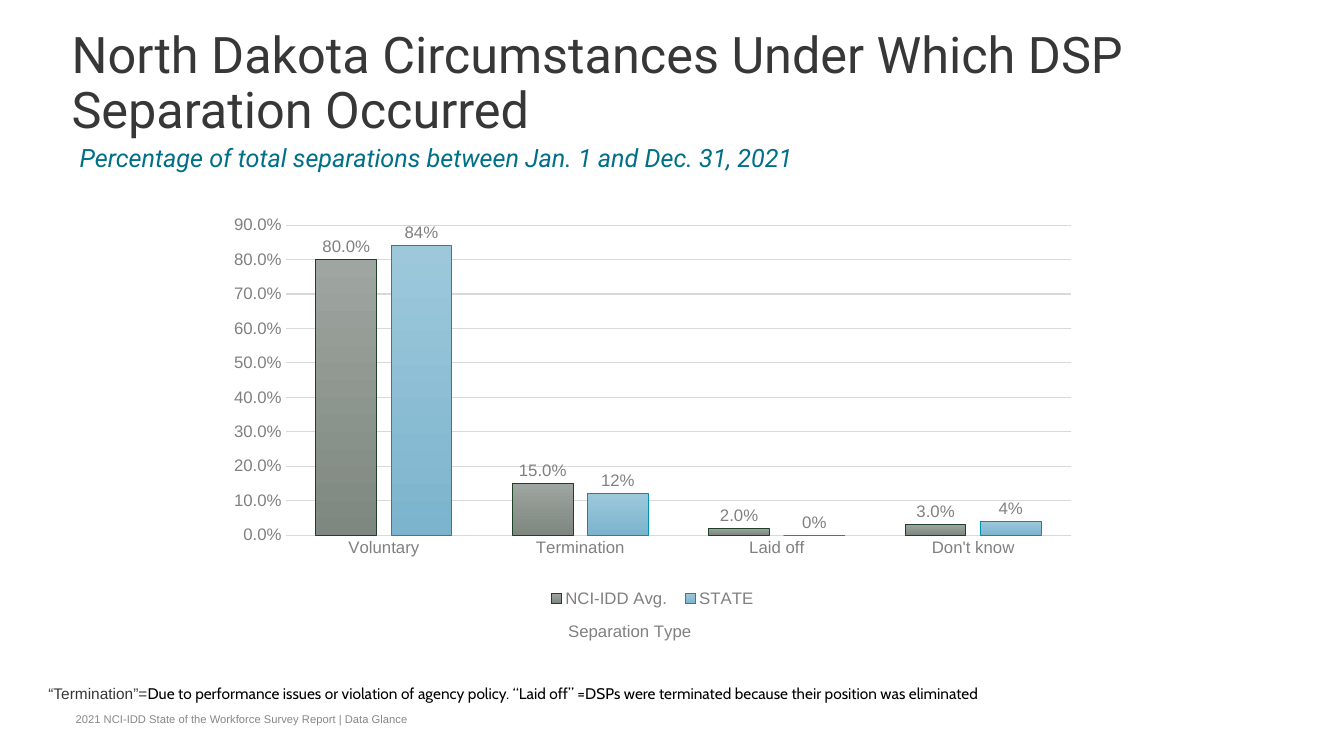
"""Build the slide on circumstances of DSP separation in North Dakota."""
from dataclasses import dataclass
from typing import Any

from pptx import Presentation
from pptx.chart.chart import Chart
from pptx.chart.data import CategoryChartData
from pptx.dml.color import RGBColor
from pptx.enum.chart import XL_CHART_TYPE, XL_LABEL_POSITION, XL_LEGEND_POSITION, XL_TICK_MARK
from pptx.enum.text import MSO_ANCHOR, MSO_AUTO_SIZE, PP_ALIGN
from pptx.oxml import parse_xml
from pptx.oxml.ns import nsdecls, qn
from pptx.util import Inches, Pt

GREY, RULE, INK = "808080", "D9D9D9", "373737"


@dataclass(frozen=True)
class Run:
    text: str
    font: str
    size: float
    color: str
    italic: bool = False


@dataclass(frozen=True)
class Passage:
    box: tuple[float, float, float, float]
    runs: tuple[Run, ...]
    line_spacing: float = 1.0
    anchor: MSO_ANCHOR = MSO_ANCHOR.TOP


@dataclass(frozen=True)
class Group:
    name: str
    shares: tuple[float, ...]
    gradient: tuple[str, str]
    outline: str
    label_format: str


HEADING = Passage(
    (0.71, 0.3, 11.83, 0.69),
    (Run("North Dakota Circumstances Under Which DSP Separation Occurred", "Roboto", 36, INK),),
    0.9,
)
PASSAGES = (
    Passage(
        (0.75, 7.05, 7.86, 0.15),
        (Run("2021 NCI-IDD State of the Workforce Survey Report | Data Glance", "Arial", 8, "878787"),),
        anchor=MSO_ANCHOR.BOTTOM,
    ),
    Passage(
        (0.79, 1.45, 11.75, 0.45),
        (Run("Percentage of total separations between Jan. 1 and Dec. 31, 2021",
             "Roboto", 18, "006F88", True),),
        0.9,
    ),
    Passage(
        (0.48, 6.75, 9.7, 0.3),
        (
            Run("“Termination”=", "Arial", 11, INK),
            Run("Due to performance issues or violation of agency policy. “Laid off” =DSPs were "
                "terminated because their position was eliminated", "Cabin", 11, "000000"),
        ),
        1.2,
    ),
)
SEPARATION_TYPES = ("Voluntary", "Termination", "Laid off", "Don't know")
GROUPS = (
    Group("NCI-IDD Avg.", (0.8, 0.15, 0.02, 0.03), ("9FA5A0", "7E8780"), "1F4029", "0.0%"),
    Group("STATE", (0.84, 0.12, 0, 0.04), ("9DC8DC", "7CB4CD"), "0091B1", "0%"),
)


def rgb(color: str) -> RGBColor:
    """Turn a hex string into a colour."""
    return RGBColor.from_string(color)


def apply(target: Any, values: dict[str, Any]) -> None:
    """Set every attribute in values on target."""
    for key, value in values.items():
        setattr(target, key, value)


def style_font(font: Any, name: str, size: float, color: str, italic: bool = False) -> None:
    """Format a font."""
    apply(font, {"name": name, "size": Pt(size), "bold": False, "italic": italic})
    font.color.rgb = rgb(color)


def style_line(line: Any, color: str) -> None:
    """Give a line its colour and the common width."""
    line.color.rgb = rgb(color)
    line.width = Pt(0.75)


def write_passage(shape: Any, passage: Passage) -> None:
    """Place a shape and fill it with the passage's runs."""
    apply(shape, dict(zip(("left", "top", "width", "height"), map(Inches, passage.box))))
    frame = shape.text_frame
    margins = dict.fromkeys(("margin_left", "margin_top", "margin_right", "margin_bottom"), 0)
    apply(frame, margins | {
        "word_wrap": True,
        "auto_size": MSO_AUTO_SIZE.NONE,
        "vertical_anchor": passage.anchor,
    })
    paragraph = frame.paragraphs[0]
    apply(paragraph, {"alignment": PP_ALIGN.LEFT, "line_spacing": passage.line_spacing})
    for part in passage.runs:
        run = paragraph.add_run()
        run.text = part.text
        style_font(run.font, part.font, part.size, part.color, part.italic)


def set_layout(parent: Any, index: int, inner: bool = False, **fractions: float) -> None:
    """Place a chart part at fractions of the chart area."""
    for old in parent.findall(qn("c:layout")):
        parent.remove(old)
    target = '<c:layoutTarget val="inner"/>' if inner else ""
    modes = '<c:xMode val="edge"/><c:yMode val="edge"/>'
    sizes = "".join(f'<c:{key} val="{value}"/>' for key, value in fractions.items())
    parent.insert(index, parse_xml(
        f'<c:layout {nsdecls("c")}><c:manualLayout>{target}{modes}{sizes}</c:manualLayout></c:layout>'
    ))


def style_axes(chart: Chart) -> None:
    """Format both axes and the category title."""
    types, shares = chart.category_axis, chart.value_axis
    for axis in (types, shares):
        apply(axis, {"major_tick_mark": XL_TICK_MARK.NONE, "minor_tick_mark": XL_TICK_MARK.NONE})
        style_font(axis.tick_labels.font, "Arial", 12, GREY)
    style_line(types.format.line, RULE)
    heading = types.axis_title.text_frame
    heading.text = "Separation Type"
    style_font(heading.paragraphs[0].runs[0].font, "Arial", 12, GREY)
    apply(shares, {"minimum_scale": 0, "maximum_scale": 0.9, "major_unit": 0.1,
                   "has_major_gridlines": True})
    apply(shares.tick_labels, {"number_format": "0.0%", "number_format_is_linked": False})
    style_line(shares.major_gridlines.format.line, RULE)
    shares.format.line.fill.background()


def style_group(series: Any, group: Group) -> None:
    """Format the columns and labels of one group."""
    fill = series.format.fill
    fill.gradient()
    fill.gradient_angle = 270
    for stop, color in zip(fill.gradient_stops, group.gradient):
        stop.color.rgb = rgb(color)
    style_line(series.format.line, group.outline)
    labels = series.data_labels
    apply(labels, {
        "show_value": True,
        "position": XL_LABEL_POSITION.OUTSIDE_END,
        "number_format": group.label_format,
        "number_format_is_linked": False,
    })
    style_font(labels.font, "Arial", 12, GREY)


def add_separations(slide: Any) -> None:
    """Add the column chart of separations."""
    data = CategoryChartData(number_format="0.0%")
    data.categories = SEPARATION_TYPES
    for group in GROUPS:
        data.add_series(group.name, group.shares)
    area = map(Inches, (2.14, 2.06, 8.66, 4.35))
    chart = slide.shapes.add_chart(XL_CHART_TYPE.COLUMN_CLUSTERED, *area, data).chart
    apply(chart, {"has_title": False, "has_legend": True})
    style_font(chart.font, "Arial", 10, "000000")
    plot = chart.plots[0]
    apply(plot, {"gap_width": 100, "overlap": -24, "vary_by_categories": False})
    for series, group in zip(plot.series, GROUPS):
        style_group(series, group)
    style_axes(chart)
    apply(chart.legend, {"position": XL_LEGEND_POSITION.BOTTOM, "include_in_layout": False})
    style_font(chart.legend.font, "Arial", 12, GREY)
    set_layout(chart.element.find(".//" + qn("c:plotArea")), 0, True, x=0.08, y=0.04, w=0.9, h=0.71)
    set_layout(chart.element.find(".//" + qn("c:legend")), 1, x=0.37, y=0.86, w=0.26, h=0.07)
    set_layout(chart.element.find(".//" + qn("c:catAx") + "/" + qn("c:title")), 1, x=0.4, y=0.94)


def main() -> None:
    """Build and save the slide."""
    deck = Presentation()
    apply(deck, {"slide_width": Inches(13.33), "slide_height": Inches(7.5)})
    slide = deck.slides.add_slide(deck.slide_layouts.get_by_name("Title Only"))
    write_passage(slide.shapes.title, HEADING)
    add_separations(slide)
    for passage in PASSAGES:
        write_passage(slide.shapes.add_textbox(0, 0, 0, 0), passage)
    deck.save("out.pptx")


if __name__ == "__main__":
    main()
